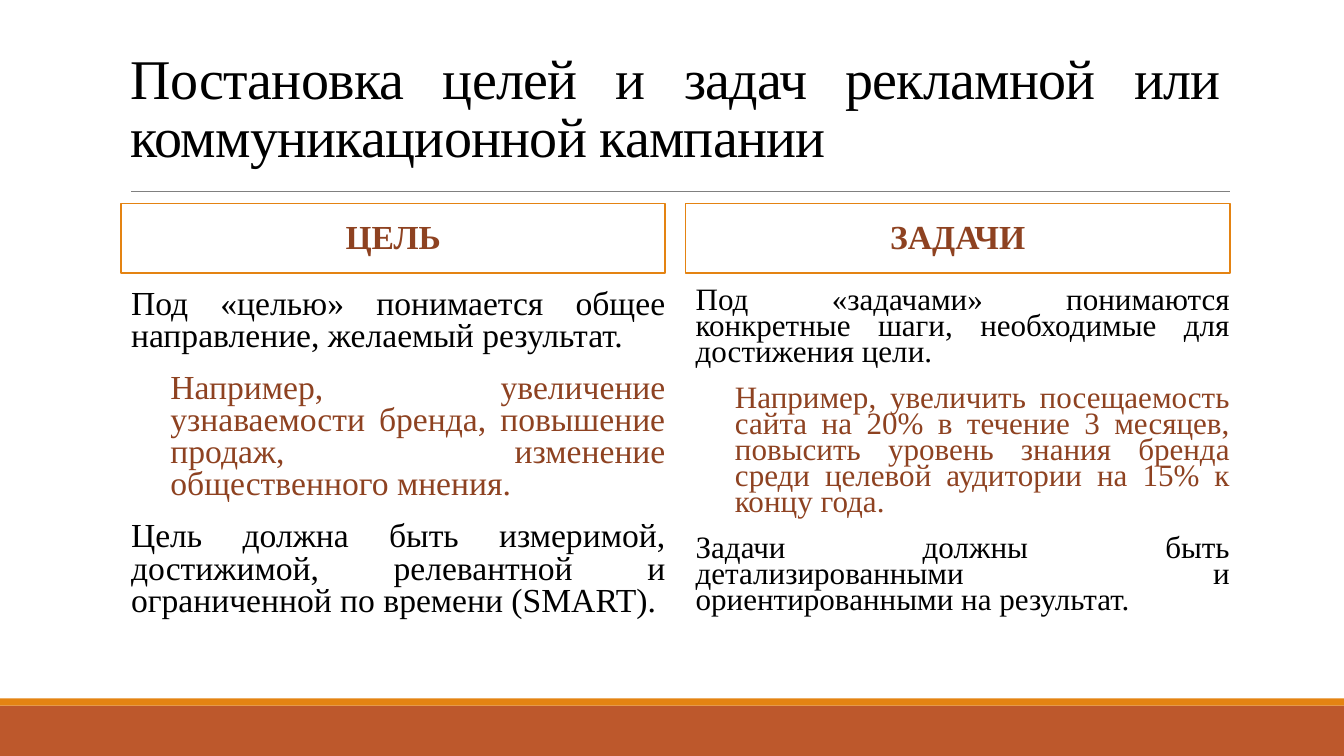
from pptx import Presentation, util as u
from pptx.dml.color import RGBColor
from pptx.enum import shapes, text
from lxml import etree

THEME = dict(
    font="Times New Roman", ink="000000", accent="8E4221", paper="FFFFFF",
    orange="E48312", rust="BD582C", rule="808080",
    title=40, heading=24,
)
WIDTH, HEIGHT = 13.33, 7.5
MARGIN, COLUMN, GUTTER = 1.2, 5.4, 0.2
CONTENT = 2 * COLUMN + GUTTER
INSET, QUOTE_INDENT = 0.1, 0.49
RULE_Y, HEADING_Y, BODY_Y, BAND_Y = 1.9, 2.02, 2.82, 7

COLUMNS = [
    ("ЦЕЛЬ", 24, 0.8, [
        "Под «целью» понимается общее направление, желаемый результат.",
        "Например, увеличение узнаваемости бренда, повышение продаж, "
        "изменение общественного мнения.",
        "Цель должна быть измеримой, достижимой, релевантной и "
        "ограниченной по времени (SMART).",
    ]),
    ("ЗАДАЧИ", 22.2, 0.7, [
        "Под «задачами» понимаются конкретные шаги, необходимые для "
        "достижения цели.",
        "Например, увеличить посещаемость сайта на 20% в течение 3 месяцев, "
        "повысить уровень знания бренда среди целевой аудитории на 15% к "
        "концу года.",
        "Задачи должны быть детализированными и ориентированными на результат.",
    ]),
]

deck = Presentation()
deck.slide_width, deck.slide_height = u.Inches(WIDTH), u.Inches(HEIGHT)
page = deck.slides.add_slide(deck.slide_layouts[6])


def add_box(left, top, width, height, fill=None, line=None, **frame_format):
    """Add a rectangle if a fill is given, otherwise a wrapping text box."""
    place = [u.Inches(value) for value in (left, top, width, height)]
    if fill:
        box = page.shapes.add_shape(shapes.MSO_SHAPE.RECTANGLE, *place)
        box.shadow.inherit = False
        box.fill.solid()
        box.fill.fore_color.rgb = RGBColor.from_string(THEME[fill])
        if line:
            box.line.color.rgb = RGBColor.from_string(THEME[line])
            box.line.width = u.Pt(1.25)
        else:
            box.line.fill.background()
    else:
        box = page.shapes.add_textbox(*place)
    for name, value in dict(word_wrap=True, **frame_format).items():
        setattr(box.text_frame, name, value)
    return box


def write(para, words, size, color="ink", bold=False, **para_format):
    span = para.add_run()
    span.text = words
    for name, value in dict(name=THEME["font"], size=u.Pt(size), bold=bold).items():
        setattr(span.font, name, value)
    span.font.color.rgb = RGBColor.from_string(THEME[color])
    for name, value in para_format.items():
        setattr(para, name, value)
    return span


# Footer bands and the rule under the title
add_box(0, BAND_Y, WIDTH, HEIGHT - BAND_Y, fill="rust")
add_box(0, BAND_Y - 0.07, WIDTH, 0.07, fill="orange")
rule = page.shapes.add_connector(
    shapes.MSO_CONNECTOR.STRAIGHT, u.Inches(MARGIN + INSET), u.Inches(RULE_Y),
    u.Inches(MARGIN + CONTENT), u.Inches(RULE_Y))
rule.line.color.rgb = RGBColor.from_string(THEME["rule"])
rule.line.width = u.Pt(0.5)
etree.SubElement(
    rule._element.spPr,
    "{http://schemas.openxmlformats.org/drawingml/2006/main}effectLst")

# Title
title = add_box(MARGIN, 0.31, CONTENT, RULE_Y - 0.31,
                vertical_anchor=text.MSO_ANCHOR.MIDDLE)
title_span = write(
    title.text_frame.paragraphs[0],
    "Постановка целей и задач рекламной или коммуникационной кампании",
    THEME["title"], alignment=text.PP_ALIGN.JUSTIFY, line_spacing=0.85)
title_span.font._element.set("spc", "-50")

# Two columns, each with a framed heading and its body
for index, (heading, size, spacing, paragraphs) in enumerate(COLUMNS):
    left = MARGIN + index * (COLUMN + GUTTER)
    frame = add_box(left, HEADING_Y, COLUMN, 0.69, fill="paper", line="orange",
                    vertical_anchor=text.MSO_ANCHOR.MIDDLE)
    write(frame.text_frame.paragraphs[0], heading, THEME["heading"], "accent",
          bold=True, alignment=text.PP_ALIGN.CENTER, line_spacing=0.9)

    body = add_box(left, BODY_Y, COLUMN, 3.69, margin_left=0, margin_right=0)
    for number, words in enumerate(paragraphs):
        para = body.text_frame.add_paragraph() if number else body.text_frame.paragraphs[0]
        example = number == 1
        write(para, words, size, "accent" if example else "ink",
              alignment=text.PP_ALIGN.JUSTIFY, line_spacing=spacing,
              space_before=u.Pt(12 if number else 0), space_after=u.Pt(2))
        indent = QUOTE_INDENT if example else INSET
        para._p.get_or_add_pPr().set("marL", str(u.Inches(indent)))

deck.save("out.pptx")
